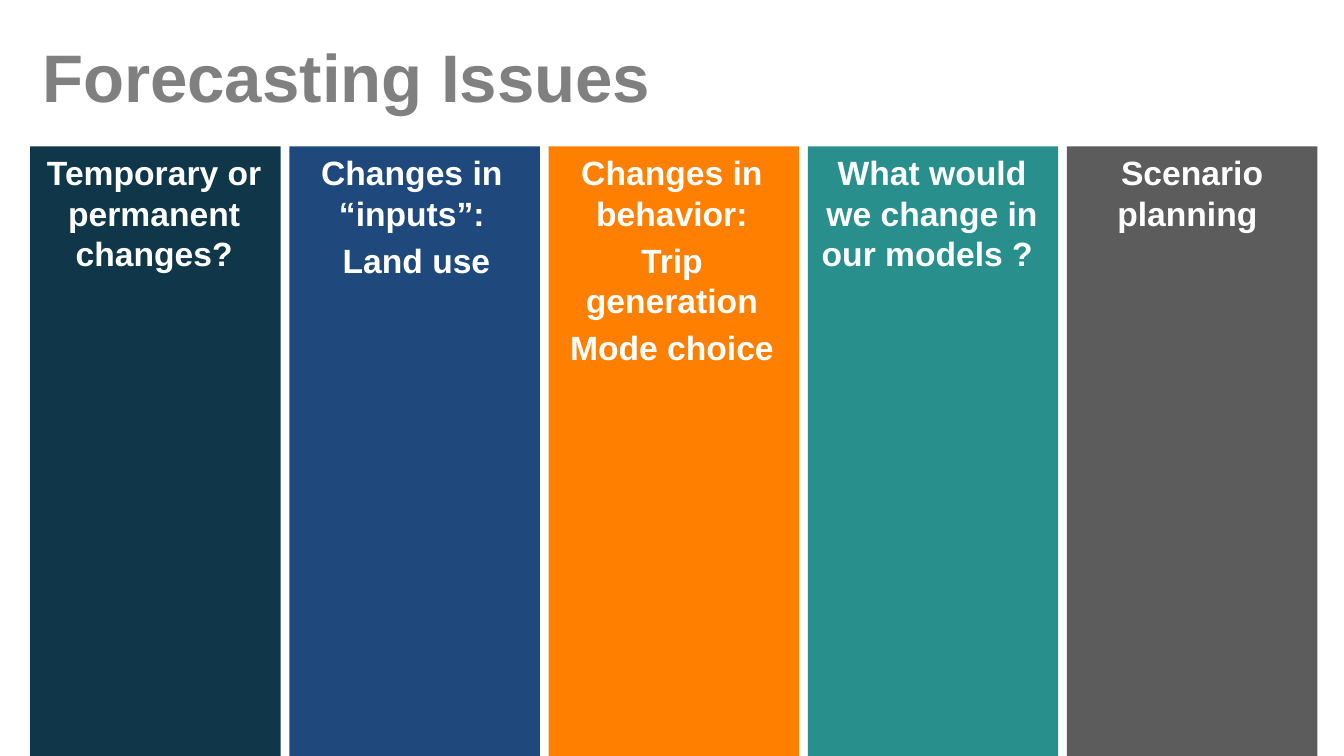
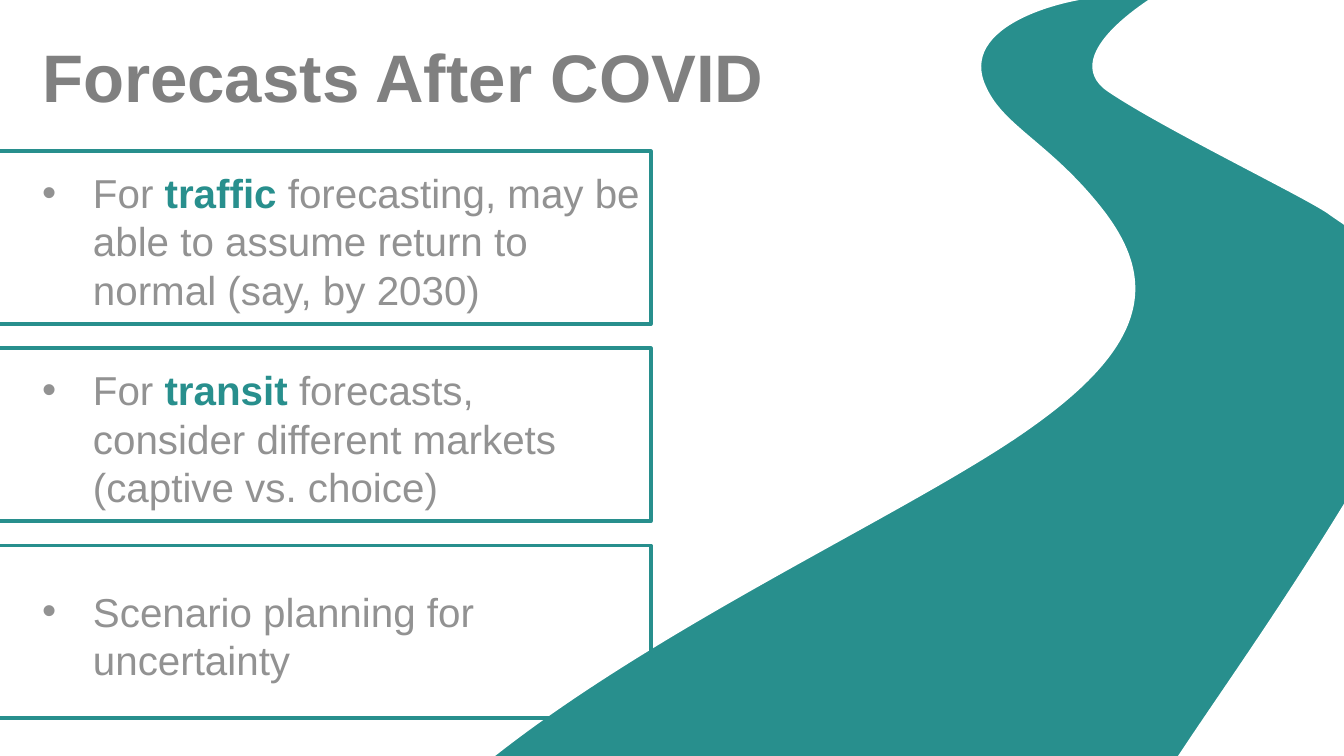
from pptx import Presentation
from pptx.dml.color import RGBColor
from pptx.enum.shapes import MSO_SHAPE
from pptx.enum.text import MSO_ANCHOR, PP_ALIGN
from pptx.oxml.ns import qn
from pptx.util import Inches, Pt
from lxml.etree import SubElement

# Shared look
SLIDE_WIDTH, SLIDE_HEIGHT = 11.11, 6.25
MARGIN = 0.25
TEAL, WHITE = "288F8D", "FFFFFF"
TITLE_GRAY, BODY_GRAY = "808080", "929292"
TITLE_FONT = {"name": "Arial", "size": Pt(40), "bold": True}
COLUMN_FONT = {"name": "Arial", "size": Pt(20), "bold": True}
BODY_FONT = {"name": "Arial", "size": Pt(24), "bold": False}

# Column grid of the first slide: fill, left of the text, lines
COLUMN_TOP, COLUMN_WIDTH, COLUMNS_RIGHT = 1.21, 2.07, 10.89
COLUMN_TEXT_HEIGHT = 4.18
COLUMNS = [
    ("0F3749", 0.24, ["Temporary or permanent changes?"]),
    ("1F497D", 2.37, ["Changes in “inputs”:", " Land use"]),
    ("FF7F00", 4.52, ["Changes in behavior:", "Trip generation",
                      "Mode choice"]),
    (TEAL, 6.67, ["What would we change in our models ? "]),
    ("5C5C5C", 8.82, ["Scenario planning "]),
]
COLUMN_PITCH = (COLUMNS_RIGHT - MARGIN - COLUMN_WIDTH) / (len(COLUMNS) - 1)

# Rows of the second slide: text width, then (words, highlighted) pairs
ROW_LEFT, ROW_TOP, ROW_WIDTH, ROW_HEIGHT, ROW_PITCH = -0.32, 1.25, 5.7, 1.43, 1.63
ROW_TEXT_TOP, ROW_TEXT_HEIGHT = 1.33, 1.32
HANGING_INDENT = 0.42
ROWS = [
    (5.19, [("For ", False), ("traffic", True),
            (" forecasting, may be able to assume return to normal "
             "(say, by 2030)", False)]),
    (5.04, [("For ", False), ("transit", True),
            (" forecasts, consider different markets "
             "(captive vs. choice)", False)]),
    (5.19, [("Scenario planning for uncertainty", False)]),
]

# Road outline: cubic curves down the right edge, then up the left edge
ROAD_WIDTH = 7.77
ROAD_START = (9.17, 0.74)
ROAD_RIGHT = [
    (9.61, 1.04), (10.79, 1.61), (10.99, 1.75),
    (11.26, 1.95), (12.17, 2.4), (11.47, 3.6),
    (10.78, 4.8), (10.13, 5.69), (9.71, 6.33),
]
ROAD_FOOT = (3.96, 6.33)
ROAD_LEFT = [
    (5.39, 5.16), (7.59, 4.19), (8.54, 3.5),
    (9.49, 2.82), (9.54, 2.3), (9.09, 1.73),
    (8.67, 1.2), (8.29, 1.06), (8.14, 0.74),
    (7.86, 0.18), (8.85, -0.05), (9.19, -0.05),
    (9.23, -0.05), (9.61, -0.05), (9.61, -0.05),
    (9.61, -0.05), (8.74, 0.45), ROAD_START,
]


def color(value):
    return RGBColor.from_string(value)


def set_format(target, values):
    for name, value in values.items():
        setattr(target, name, value)


def add_span(para, text, font, font_color):
    span = para.add_run()
    span.text = text
    set_format(span.font, font)
    span.font.color.rgb = color(font_color)


def paint(shape, fill=None, line=None, line_width=0):
    shape.shadow.inherit = False
    if fill:
        shape.fill.solid()
        shape.fill.fore_color.rgb = color(fill)
    else:
        shape.fill.background()
    if line:
        shape.line.color.rgb = color(line)
        shape.line.width = Pt(line_width)
    else:
        shape.line.fill.background()


def add_rectangle(page, left, top, width, height, **look):
    box = page.shapes.add_shape(
        MSO_SHAPE.RECTANGLE, *map(Inches, (left, top, width, height)))
    paint(box, **look)


def add_text_frame(page, left, top, width, height, anchor):
    box = page.shapes.add_textbox(*map(Inches, (left, top, width, height)))
    set_format(box.text_frame, {"word_wrap": True, "vertical_anchor": anchor})
    return box.text_frame


def add_title(page, text, width):
    frame = add_text_frame(page, MARGIN, 0.21, width, 0.83, MSO_ANCHOR.MIDDLE)
    add_span(frame.paragraphs[0], text, TITLE_FONT, TITLE_GRAY)


def add_column_text(page, left, lines):
    frame = add_text_frame(page, left, COLUMN_TOP, COLUMN_WIDTH,
                           COLUMN_TEXT_HEIGHT, MSO_ANCHOR.TOP)
    for number, line in enumerate(lines):
        para = frame.add_paragraph() if number else frame.paragraphs[0]
        set_format(para, {"alignment": PP_ALIGN.CENTER,
                          "space_before": Pt(4 if number else 0)})
        add_span(para, line, COLUMN_FONT, WHITE)


def add_bullet(para):
    properties = para._p.get_or_add_pPr()
    properties.set("marL", str(Inches(HANGING_INDENT)))
    properties.set("indent", str(-Inches(HANGING_INDENT)))
    SubElement(properties, qn("a:buFont")).set("typeface", "Arial")
    SubElement(properties, qn("a:buChar")).set("char", "•")


def add_row_text(page, index, width, pieces):
    frame = add_text_frame(page, MARGIN, ROW_TEXT_TOP + index * ROW_PITCH,
                           width, ROW_TEXT_HEIGHT, MSO_ANCHOR.MIDDLE)
    para = frame.paragraphs[0]
    add_bullet(para)
    for words, highlighted in pieces:
        add_span(para, words, BODY_FONT | {"bold": highlighted},
                 TEAL if highlighted else BODY_GRAY)


def bend(lines):
    """Turn each three line segments into one cubic curve."""
    for first, second, third in zip(lines[::3], lines[1::3], lines[2::3]):
        first.tag = qn("a:cubicBezTo")
        for line in (second, third):
            first.append(line[0])
            line.getparent().remove(line)


def add_road(page):
    points = ROAD_RIGHT + [ROAD_FOOT] + ROAD_LEFT
    outline = page.shapes.build_freeform(*map(Inches, ROAD_START))
    outline.add_line_segments(
        [(Inches(x), Inches(y)) for x, y in points], close=True)
    road = outline.convert_to_shape()
    lines = list(road._element.iter(qn("a:lnTo")))
    foot = len(ROAD_RIGHT)
    bend(lines[:foot])
    bend(lines[foot + 1:foot + 1 + len(ROAD_LEFT)])
    # The frame follows the curve, not its outermost control point
    road.width = Inches(ROAD_WIDTH)
    next(road._element.iter(qn("a:path"))).set("w", str(road.width))
    paint(road, fill=TEAL, line=WHITE, line_width=3)


def add_issues_page(deck):
    page = deck.slides.add_slide(deck.slide_layouts[6])
    for index, (fill, _, _) in enumerate(COLUMNS):
        add_rectangle(page, MARGIN + index * COLUMN_PITCH, COLUMN_TOP,
                      COLUMN_WIDTH, SLIDE_HEIGHT - COLUMN_TOP, fill=fill)
    add_title(page, "Forecasting Issues", 10.65)
    for _, left, lines in COLUMNS:
        add_column_text(page, left, lines)


def add_forecasts_page(deck):
    page = deck.slides.add_slide(deck.slide_layouts[6])
    add_road(page)
    for index in range(len(ROWS)):
        add_rectangle(page, ROW_LEFT, ROW_TOP + index * ROW_PITCH,
                      ROW_WIDTH, ROW_HEIGHT, line=TEAL, line_width=2.25)
    add_title(page, "Forecasts After COVID", 6.63)
    for index, (width, pieces) in enumerate(ROWS):
        add_row_text(page, index, width, pieces)


def main():
    deck = Presentation()
    set_format(deck, {"slide_width": Inches(SLIDE_WIDTH),
                      "slide_height": Inches(SLIDE_HEIGHT)})
    add_issues_page(deck)
    add_forecasts_page(deck)
    deck.save("out.pptx")


if __name__ == "__main__":
    main()
